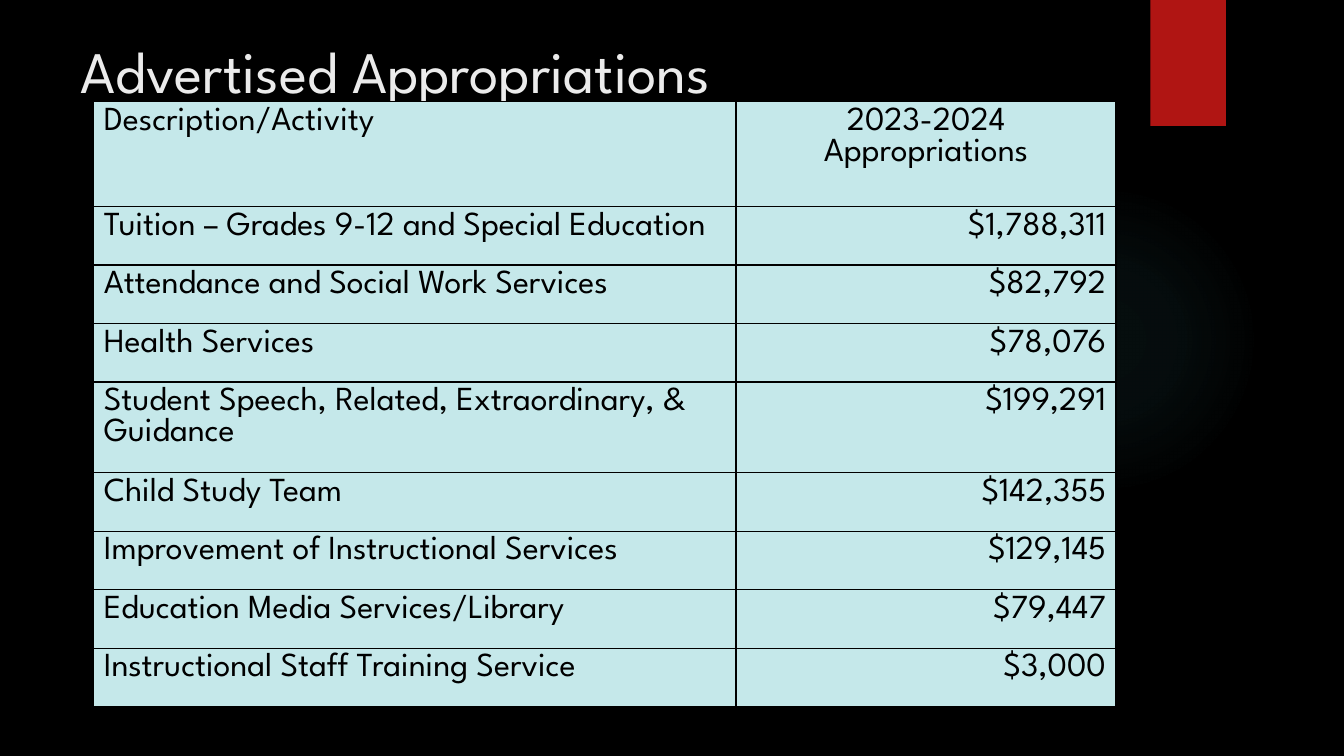
import lxml.etree
import pptx
import pptx.dml.color
import pptx.enum.shapes
import pptx.enum.text
import pptx.oxml
import pptx.oxml.ns
import pptx.util

# Content
TITLE = "Advertised Appropriations"
HEADER = ("Description/Activity", "2023-2024 Appropriations")
APPROPRIATIONS = [
    ("Tuition – Grades 9-12 and Special Education", "$1,788,311"),
    ("Attendance and Social Work Services", "$82,792"),
    ("Health Services", "$78,076"),
    ("Student Speech, Related, Extraordinary, & Guidance", "$199,291"),
    ("Child Study Team", "$142,355"),
    ("Improvement of Instructional Services", "$129,145"),
    ("Education Media Services/Library", "$79,447"),
    ("Instructional Staff Training Service", "$3,000"),
]

# Layout and style
WIDTH, HEIGHT = 13.33, 7.5
COLUMNS = (6.37, 3.77)
HEADER_HEIGHT, ROW_HEIGHT = 1.04, 0.58
FONT = "League Spartan"
BLACK, WHITE, RED, TEAL, PALE = "000000", "EBEBEB", "B01513", "50B9C1", "C5E8EA"
GLOW_STOPS = [(0, 7), (36, 6), (69, 0)]  # position, opacity in percent

ALIGN = pptx.enum.text.PP_ALIGN
SHAPE = pptx.enum.shapes.MSO_SHAPE
NS = pptx.oxml.ns.nsdecls("a")
inches = pptx.util.Inches


def paint(fill, color):
    fill.solid()
    fill.fore_color.rgb = pptx.dml.color.RGBColor.from_string(color)


def style(p, size, color, align=ALIGN.LEFT):
    p.alignment = align
    p.font.name = FONT
    p.font.size = pptx.util.Pt(size)
    paint(p.font.fill, color)


def add_shape(s, kind, box, color):
    sp = s.shapes.add_shape(kind, *map(inches, box))
    sp.shadow.inherit = False
    sp.line.fill.background()
    paint(sp.fill, color)
    return sp


def add_glow(s, box):
    sp = add_shape(s, SHAPE.OVAL, box, TEAL)
    stops = "".join(
        f'<a:gs pos="{pos * 1000}"><a:srgbClr val="{TEAL}">'
        f'<a:alpha val="{alpha * 1000}"/></a:srgbClr></a:gs>'
        for pos, alpha in GLOW_STOPS)
    gradient = pptx.oxml.parse_xml(
        f'<a:gradFill {NS}><a:gsLst>{stops}</a:gsLst><a:path path="circle">'
        '<a:fillToRect l="50000" t="50000" r="50000" b="50000"/></a:path></a:gradFill>')
    solid = sp.element.spPr.find(pptx.oxml.ns.qn("a:solidFill"))
    sp.element.spPr.replace(solid, gradient)


def add_borders(cell):
    tcPr = cell._tc.get_or_add_tcPr()
    for i, side in enumerate(("lnL", "lnR", "lnT", "lnB")):
        tcPr.insert(i, pptx.oxml.parse_xml(
            f'<a:{side} {NS} w="12700"><a:solidFill><a:srgbClr val="{BLACK}"/>'
            f'</a:solidFill></a:{side}>'))


def add_title(s, box):
    tf = s.shapes.add_textbox(*map(inches, box)).text_frame
    tf.word_wrap = True
    tf.margin_top = inches(0.23)
    tf.text = TITLE
    style(tf.paragraphs[0], 42, WHITE)


def add_table(s, left, top):
    rows = [HEADER] + APPROPRIATIONS
    heights = [HEADER_HEIGHT] + [ROW_HEIGHT] * len(APPROPRIATIONS)
    table = s.shapes.add_table(
        len(rows), len(COLUMNS), inches(left), inches(top),
        inches(sum(COLUMNS)), inches(sum(heights))).table
    for column, width in zip(table.columns, COLUMNS):
        column.width = inches(width)
    for r, (texts, height) in enumerate(zip(rows, heights)):
        table.rows[r].height = inches(height)
        aligns = (ALIGN.LEFT, ALIGN.RIGHT if r else ALIGN.CENTER)
        for c, (text, align) in enumerate(zip(texts, aligns)):
            cell = table.cell(r, c)
            cell.text = text
            style(cell.text_frame.paragraphs[0], 24, BLACK, align)
            paint(cell.fill, PALE)
            add_borders(cell)
    table.first_row = table.horz_banding = False


def main():
    prs = pptx.Presentation()
    prs.slide_width, prs.slide_height = inches(WIDTH), inches(HEIGHT)
    s = prs.slides.add_slide(prs.slide_layouts[6])

    # Backdrop
    paint(s.background.fill, BLACK)
    add_glow(s, (9.41, 1.83, 3.08, 3.08))
    add_shape(s, SHAPE.RECTANGLE, (11.41, 0, 0.75, HEIGHT / 6), RED)

    # Title and table
    add_title(s, (0.7, 0.11, 10.29, 1.53))
    add_table(s, 0.93, 1.01)
    prs.save("out.pptx")


if __name__ == "__main__":
    main()
